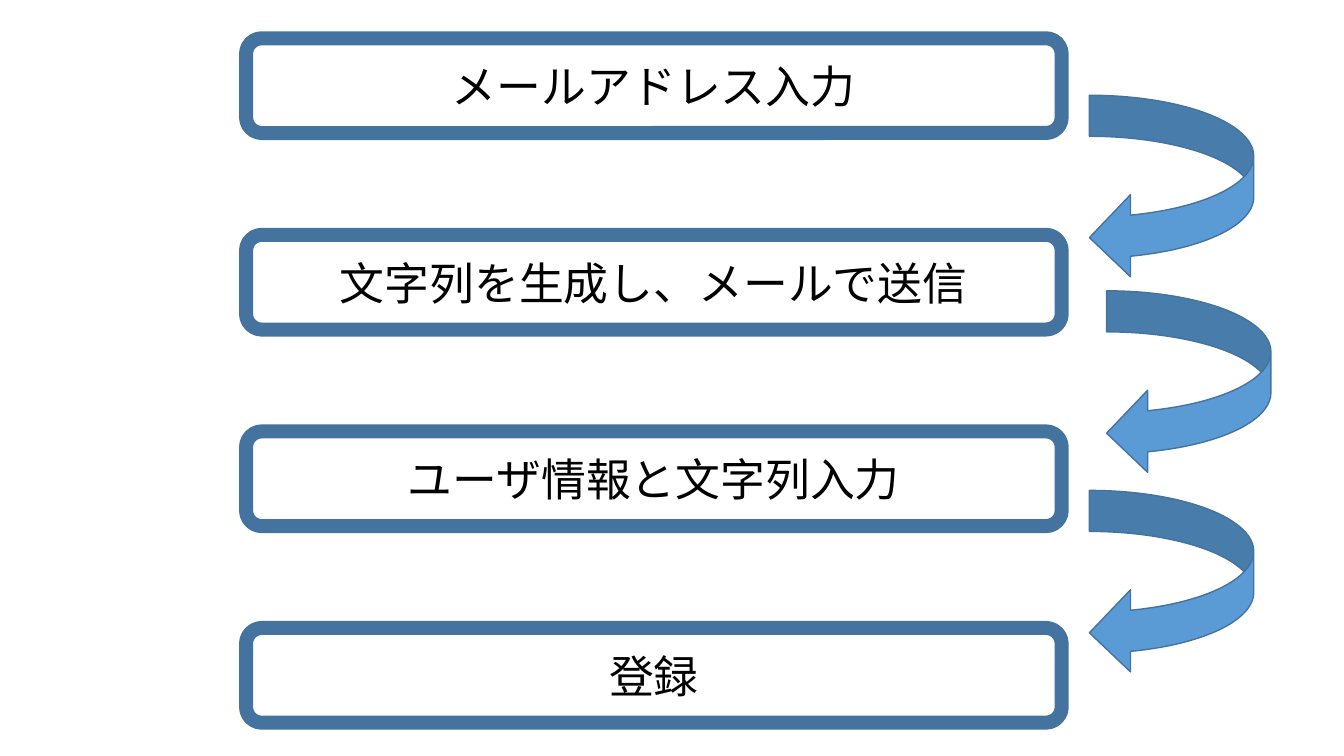
"""Builds a slide with four registration steps linked by curved arrows."""
from pptx import Presentation
from pptx.dml.color import RGBColor as RGB
from pptx.enum.shapes import MSO_SHAPE as SHAPE
from pptx.enum.text import MSO_ANCHOR as ANCHOR, PP_ALIGN as ALIGN
from pptx.util import Inches, Pt

COLORS = {"border": "43739E", "arrow": "5B9BD5", "text": "000000"}
STEPS = ["メールアドレス入力", "文字列を生成し、メールで送信", "ユーザ情報と文字列入力", "登録"]
ARROWS = [(10.71, 1.04), (10.88, 2.98), (10.71, 4.96)]
LEFT, TOP, PITCH = 2.44, 0.38, 1.95
BOX_W, BOX_H = 8.09, 0.94
ARROW_W, ARROW_H = 1.82, 1.63

prs = Presentation()
prs.slide_width, prs.slide_height = Inches(13.33), Inches(7.5)
s = prs.slides.add_slide(prs.slide_layouts[6])


def add_outlined(kind, x, y, w, h, weight):
    sp = s.shapes.add_shape(kind, Inches(x), Inches(y), Inches(w), Inches(h))
    sp.shadow.inherit = False
    sp.line.color.rgb = RGB.from_string(COLORS["border"])
    sp.line.width = Pt(weight)
    return sp


for row, step in enumerate(STEPS):
    sp = add_outlined(SHAPE.ROUNDED_RECTANGLE, LEFT, TOP + row * PITCH, BOX_W, BOX_H, 10)
    sp.fill.background()
    tf = sp.text_frame
    tf.word_wrap = True
    tf.vertical_anchor = ANCHOR.MIDDLE
    p = tf.paragraphs[0]
    p.alignment = ALIGN.CENTER
    r = p.add_run()
    r.text = step
    r.font.name = "Calibri"
    r.font.size = Pt(32)
    r.font.color.rgb = RGB.from_string(COLORS["text"])

for x, y in ARROWS:
    sp = add_outlined(SHAPE.CURVED_DOWN_ARROW, x, y, ARROW_W, ARROW_H, 1)
    sp.rotation = 90
    sp.fill.solid()
    sp.fill.fore_color.rgb = RGB.from_string(COLORS["arrow"])

prs.save("out.pptx")
